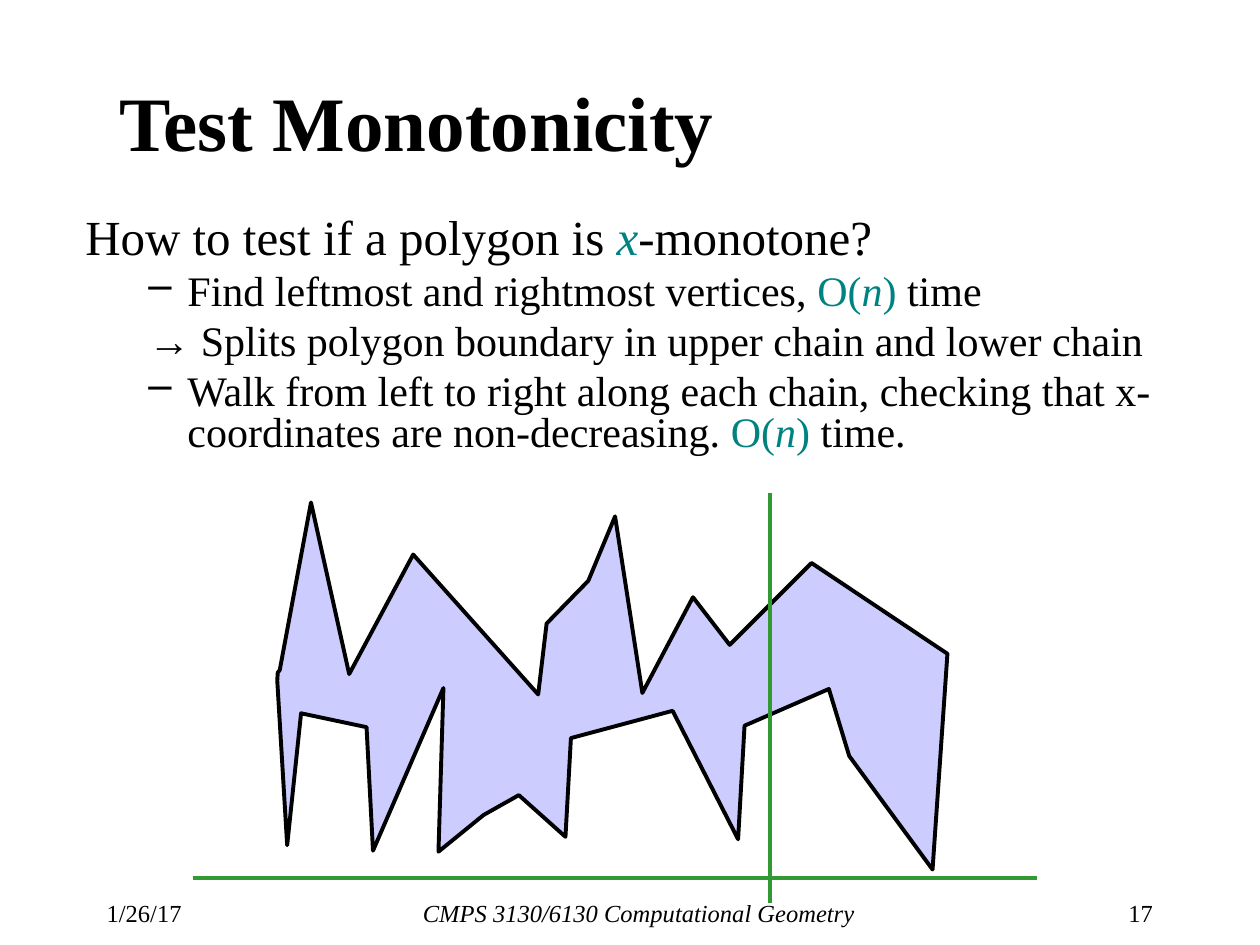
import pptx
import pptx.dml.color
import pptx.enum.shapes
import pptx.enum.text
import pptx.oxml.ns
import pptx.util
import lxml.etree

Cm = pptx.util.Cm
Pt = pptx.util.Pt
ALIGN = pptx.enum.text.PP_ALIGN
ANCHOR = pptx.enum.text.MSO_ANCHOR

FONT = "Times New Roman"
BLACK, TEAL, GREEN, LAVENDER = "000000", "008380", "339933", "CCCCFF"

QUESTION = {"size": 28, "indent": (0.97, -0.97), "gap": 6.4}
STEP = {"size": 24, "indent": (2.06, -0.79), "gap": 5.5}
LINEAR_TIME = [("O(", TEAL, False), ("n", TEAL, True), (")", TEAL, False)]

BODY = [
    (QUESTION, None, [("How to test if a polygon is ", BLACK, False),
                      ("x", TEAL, True),
                      ("-monotone?", BLACK, False)]),
    (STEP, "–", [("Find leftmost and rightmost vertices, ", BLACK, False),
                 *LINEAR_TIME, (" time", BLACK, False)]),
    (STEP, None, [("→ Splits polygon boundary in upper chain and lower chain",
                   BLACK, False)]),
    (STEP, "–", [("Walk from left to right along each chain, checking that "
                  "x-coordinates are non-decreasing. ", BLACK, False),
                 *LINEAR_TIME, (" time.", BLACK, False)]),
]

UPPER_CHAIN = [
    (559, 1372), (560, 1356), (564, 1351), (627, 1013), (704, 1359),
    (833, 1118), (1085, 1400), (1102, 1257), (1186, 1171), (1240, 1041),
    (1295, 1397), (1397, 1204), (1471, 1300), (1636, 1135), (1910, 1318),
]
LOWER_CHAIN = [
    (579, 1704), (607, 1438), (739, 1466), (752, 1715), (894, 1387),
    (884, 1717), (975, 1643), (1046, 1603), (1140, 1687), (1151, 1488),
    (1356, 1433), (1488, 1692), (1501, 1463), (1671, 1389), (1712, 1524),
    (1880, 1753),
]


def color(value):
    return pptx.dml.color.RGBColor.from_string(value)


def apply(target, values):
    for name, value in values.items():
        setattr(target, name, value)


def add_frame(slide, box, anchor=ANCHOR.TOP):
    frame = slide.shapes.add_textbox(*map(Cm, box)).text_frame
    apply(frame, {"word_wrap": True, "vertical_anchor": anchor})
    return frame


def add_run(paragraph, text, size, hue=BLACK, italic=False, bold=False):
    run = paragraph.add_run()
    run.text = text
    apply(run.font, {"name": FONT, "size": Pt(size),
                     "italic": italic, "bold": bold})
    run.font.color.rgb = color(hue)


def add_label(slide, box, text, size, align=ALIGN.LEFT, anchor=ANCHOR.TOP,
              **style):
    paragraph = add_frame(slide, box, anchor).paragraphs[0]
    paragraph.alignment = align
    add_run(paragraph, text, size, **style)


def indent(paragraph, margin, hanging, bullet):
    properties = paragraph._p.get_or_add_pPr()
    properties.set("marL", str(Cm(margin)))
    properties.set("indent", str(Cm(hanging)))
    tag = "a:buChar" if bullet else "a:buNone"
    mark = lxml.etree.SubElement(properties, pptx.oxml.ns.qn(tag))
    if bullet:
        mark.set("char", bullet)


def add_body(slide, box):
    frame = add_frame(slide, box)
    for number, (level, bullet, runs) in enumerate(BODY):
        paragraph = frame.add_paragraph() if number else frame.paragraphs[0]
        apply(paragraph, {"line_spacing": 0.8,
                          "space_before": Pt(level["gap"])})
        indent(paragraph, *level["indent"], bullet)
        for text, hue, italic in runs:
            add_run(paragraph, text, level["size"], hue, italic)


def draw_outline(line, hue):
    line.color.rgb = color(hue)
    line.width = Pt(2.25)


def add_polygon(slide):
    start, *rest = UPPER_CHAIN + LOWER_CHAIN[::-1]
    builder = slide.shapes.build_freeform(*start, scale=Cm(0.01))
    builder.add_line_segments(rest, close=True)
    polygon = builder.convert_to_shape()
    polygon.shadow.inherit = False
    polygon.fill.solid()
    polygon.fill.fore_color.rgb = color(LAVENDER)
    draw_outline(polygon.line, BLACK)


def add_line(slide, *ends):
    line = slide.shapes.add_connector(
        pptx.enum.shapes.MSO_CONNECTOR.STRAIGHT, *map(Cm, ends))
    draw_outline(line.line, GREEN)
    lxml.etree.SubElement(line._element.spPr,
                          pptx.oxml.ns.qn("a:effectLst"))


def main():
    deck = pptx.Presentation()
    apply(deck, {"slide_width": Cm(25.4), "slide_height": Cm(19.05)})
    slide = deck.slides.add_slide(deck.slide_layouts[6])

    add_label(slide, (1.9, 17.98, 2.41, 0.64), "1/26/17", 14)
    add_label(slide, (4.83, 17.98, 16.1, 0.64),
              "CMPS 3130/6130 Computational Geometry", 14,
              ALIGN.CENTER, italic=True)
    add_label(slide, (21.41, 17.98, 2.08, 0.64), "17", 14, ALIGN.RIGHT)
    add_label(slide, (2.16, 0.84, 20.96, 3.18), "Test Monotonicity", 44,
              anchor=ANCHOR.MIDDLE, bold=True)
    add_body(slide, (1.47, 4.27, 23.09, 5.41))

    add_polygon(slide)
    add_line(slide, 3.89, 17.7, 20.9, 17.7)
    add_line(slide, 15.52, 18.21, 15.52, 9.93)
    deck.save("out.pptx")


if __name__ == "__main__":
    main()
